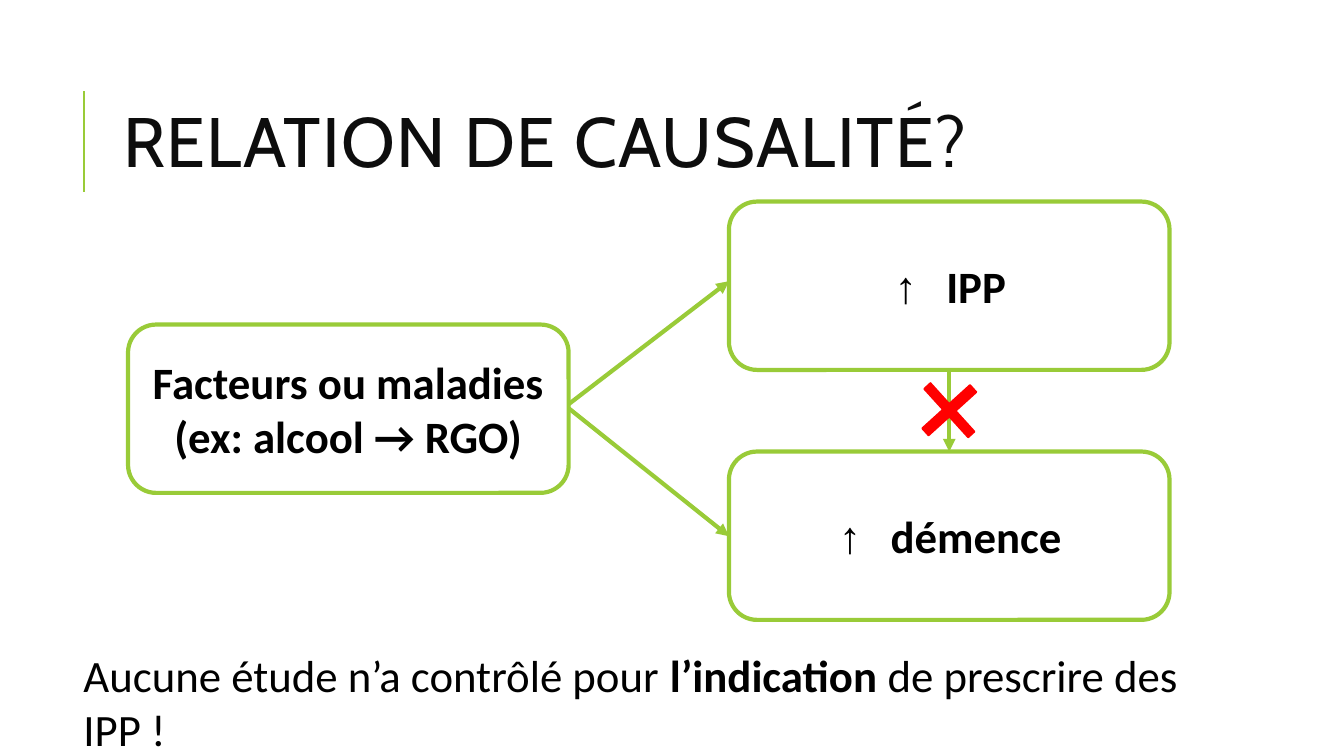
from pptx import Presentation
from pptx.dml.color import RGBColor
from pptx.enum import shapes, text
from pptx.oxml import ns
from pptx.util import Inches, Pt
from lxml import etree

COLORS = {"green": "99CB38", "white": "FFFFFF", "black": "000000",
          "title": "0D0D0D", "red": "FF0000"}
BODY = {"name": "Calibri", "size": Pt(32), "bold": False}
BOLD = {**BODY, "bold": True}
ARROW = {**BOLD, "name": "Noto Sans Mono"}
TITLE = {"name": "Cabin", "size": Pt(50), "bold": False}
BOX_W, BOX_H = 4.37, 1.67
LEFT_X, RIGHT_X = 1.27, 7.23


def color(key):
    return RGBColor.from_string(COLORS[key])


def add_run(paragraph, words, style, ink="black"):
    run = paragraph.add_run()
    run.text = words
    for attribute, value in style.items():
        setattr(run.font, attribute, value)
    run.font.color.rgb = color(ink)
    return run


def add_solid(slide, preset, at, fill, line, width):
    solid = slide.shapes.add_shape(preset, *map(Inches, at))
    solid.shadow.inherit = False
    solid.fill.solid()
    solid.fill.fore_color.rgb = color(fill)
    solid.line.color.rgb = color(line)
    solid.line.width = Pt(width)
    return solid


def add_box(slide, left, top, lines):
    """Rounded box; each line is a list of (words, style) runs."""
    box = add_solid(slide, shapes.MSO_SHAPE.ROUNDED_RECTANGLE,
                    (left, top, BOX_W, BOX_H), "white", "green", 3)
    frame = box.text_frame
    frame.word_wrap = True
    frame.vertical_anchor = text.MSO_ANCHOR.MIDDLE
    for number, runs in enumerate(lines):
        paragraph = frame.add_paragraph() if number else frame.paragraphs[0]
        paragraph.alignment = text.PP_ALIGN.CENTER
        for words, style in runs:
            add_run(paragraph, words, style)


def add_line(slide, start, end, width, arrow=True):
    line = slide.shapes.add_connector(shapes.MSO_CONNECTOR.STRAIGHT,
                                      *map(Inches, start + end))
    line.line.color.rgb = color("green")
    line.line.width = Pt(width)
    if arrow:
        etree.SubElement(line.line._get_or_add_ln(), ns.qn("a:tailEnd"), type="triangle")
    etree.SubElement(line._element.spPr, ns.qn("a:effectLst"))


def add_title(slide, words):
    title = slide.shapes.title
    title.left, title.top, title.width, title.height = map(Inches, (1.12, 0.64, 10.63, 1.64))
    frame = title.text_frame
    for attribute, value in {"word_wrap": True, "auto_size": text.MSO_AUTO_SIZE.NONE,
                             "vertical_anchor": text.MSO_ANCHOR.MIDDLE}.items():
        setattr(frame, attribute, value)
    paragraph = frame.paragraphs[0]
    paragraph.alignment = text.PP_ALIGN.LEFT
    paragraph.line_spacing = 0.8
    run = add_run(paragraph, words, TITLE, "title")
    run.font._element.set("spc", "100")


def add_conclusion(slide, runs):
    conclusion = slide.shapes.add_textbox(*map(Inches, (0.73, 6.38, 11.87, 0.64)))
    conclusion.text_frame.word_wrap = True
    for words, style in runs:
        add_run(conclusion.text_frame.paragraphs[0], words, style)


def main():
    deck = Presentation()
    deck.slide_width, deck.slide_height = Inches(13.33), Inches(7.5)
    slide = deck.slides.add_slide(deck.slide_layouts[5])

    # Title with its accent line
    add_line(slide, (0.83, 1.9), (0.83, 0.9), 1.5, arrow=False)
    add_title(slide, "RELATION DE CAUSALITÉ?")

    # Common cause and its two effects
    add_box(slide, LEFT_X, 3.22, [[("Facteurs ou maladies", BOLD)],
                                  [("(ex: alcool → RGO)", BOLD)]])
    for top, effect in ((2, "IPP"), (4.48, "démence")):
        add_box(slide, RIGHT_X, top, [[("↑ ", ARROW), (effect, BOLD)]])

    # Causal arrows
    cause_edge = LEFT_X + BOX_W
    effect_middle = RIGHT_X + BOX_W / 2
    add_line(slide, (cause_edge, 4.05), (RIGHT_X, 5.32), 3)
    add_line(slide, (cause_edge, 4.01), (RIGHT_X, 2.79), 3)
    add_line(slide, (effect_middle, 3.66), (effect_middle, 4.48), 3)

    # Cross over the rejected link
    cross = add_solid(slide, shapes.MSO_SHAPE.CROSS, (9.09, 3.75, 0.65, 0.64),
                      "red", "red", 1.25)
    cross.adjustments[0] = 0.434
    cross.rotation = 47.8

    # Conclusion
    add_conclusion(slide, [("Aucune étude n’a contrôlé pour ", BODY),
                           ("l’indication", BOLD),
                           (" de prescrire des IPP !", BODY)])
    deck.save("out.pptx")


if __name__ == "__main__":
    main()
